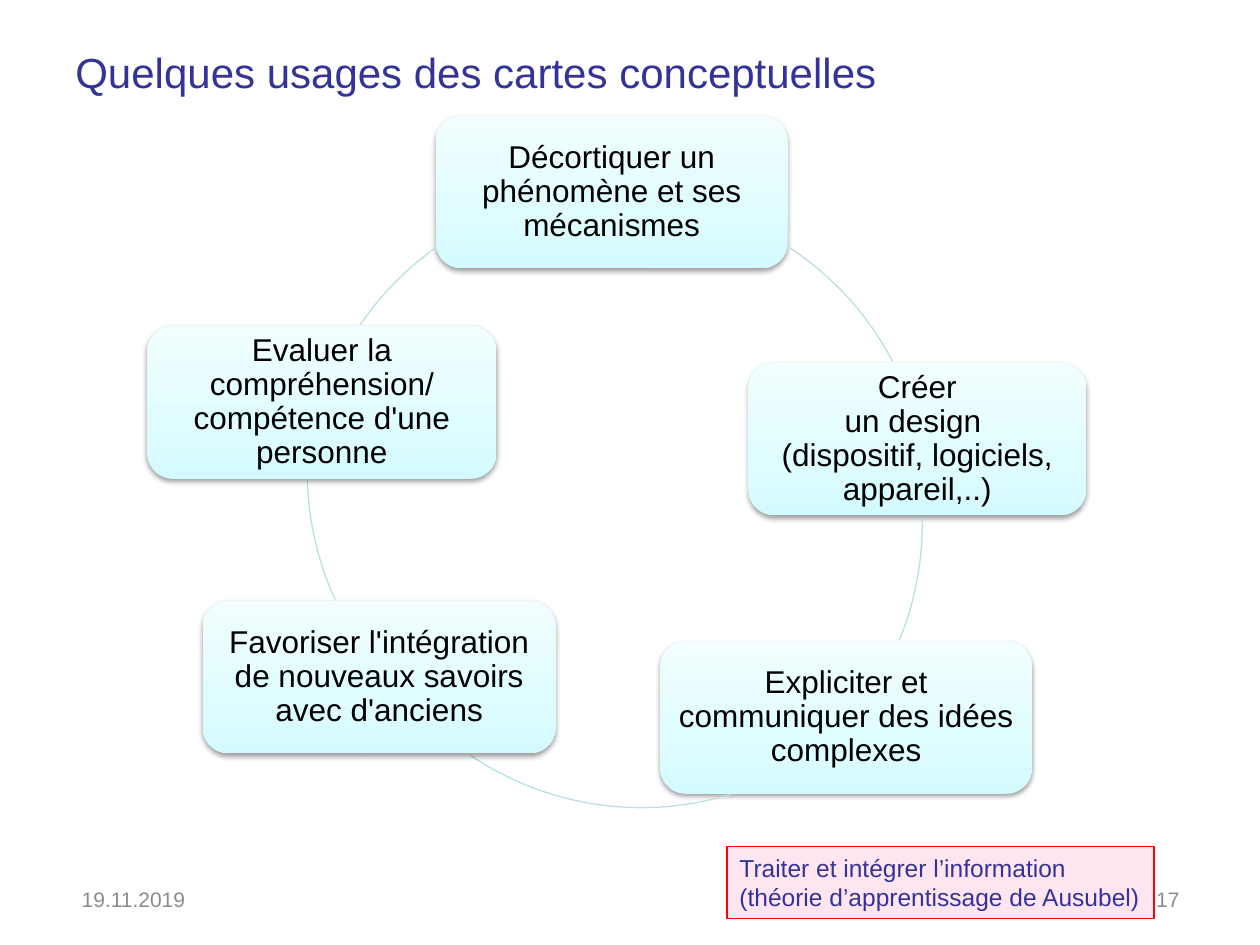
from copy import deepcopy

from lxml.etree import SubElement
from pptx import Presentation
from pptx.dml.color import RGBColor
from pptx.enum.shapes import MSO_SHAPE as Shape
from pptx.enum.text import MSO_ANCHOR as Anchor, MSO_AUTO_SIZE as AutoSize, PP_ALIGN as Align
from pptx.oxml.ns import qn
from pptx.util import Inches, Pt

BOX_HEIGHT = 1.21
RING_SIZE = 4.84
GRADIENT = [(0, "D3FBFF"), (0.35, "DFFCFF"), (1, "F2FEFF")]
USAGES = [
    (3.46, 0.92, 2.79, "Décortiquer un phénomène et ses mécanismes"),
    (5.94, 2.88, 2.68, "Créer\nun design \n(dispositif, logiciels, appareil,..)"),
    (5.24, 5.09, 2.95, "Expliciter et\ncommuniquer des idées complexes"),
    (1.61, 4.77, 2.8, "Favoriser l'intégration de nouveaux savoirs avec d'anciens"),
    (1.17, 2.59, 2.77, "Evaluer la compréhension/\ncompétence d'une personne"),
]
ARCS = [
    (2.52, 1.57, 303.4, 332.4),
    (2.48, 1.74, 358.8, 22.3),
    (2.67, 1.57, 73, 123.9),
    (2.44, 1.33, 155.2, 178.6),
    (2.44, 1.52, 214.2, 234.6),
]


def color(value):
    return RGBColor.from_string(value)


class UsageSlide:
    font = "Arial"

    def __init__(self, slide):
        self.slide = slide

    def add_text(self, shape, lines, size, hex_color, frame_format=None, paragraph_format=None):
        frame = shape.text_frame
        for name, value in {"word_wrap": True, **(frame_format or {})}.items():
            setattr(frame, name, value)
        for index, line in enumerate(lines):
            paragraph = frame.add_paragraph() if index else frame.paragraphs[0]
            paragraph.text = line
            for name, value in {"alignment": Align.LEFT, **(paragraph_format or {})}.items():
                setattr(paragraph, name, value)
            for run in paragraph.runs:
                for name, value in {"name": self.font, "size": Pt(size)}.items():
                    setattr(run.font, name, value)
                run.font.color.rgb = color(hex_color)

    def shape(self, kind, left, top, width, height):
        shape = self.slide.shapes.add_shape(kind, *map(Inches, (left, top, width, height)))
        shape.shadow.inherit = False
        return shape

    def label(self, left, top, width, height, text, size, hex_color, alignment=Align.LEFT):
        box = self.slide.shapes.add_textbox(*map(Inches, (left, top, width, height)))
        self.add_text(box, [text], size, hex_color,
                      {"vertical_anchor": Anchor.MIDDLE}, {"alignment": alignment})

    def usage(self, left, top, width, text):
        box = self.shape(Shape.ROUNDED_RECTANGLE, left, top, width, BOX_HEIGHT)
        box.fill.gradient()
        box.fill.gradient_angle = 90
        properties = box._element.spPr
        stop_list = properties.find(".//" + qn("a:gsLst"))
        stop_list.insert(1, deepcopy(stop_list[0]))
        for stop, (position, hex_color) in zip(box.fill.gradient_stops, GRADIENT):
            stop.position = position
            stop.color.rgb = color(hex_color)
        box.line.fill.background()
        shadow = SubElement(properties.find(qn("a:effectLst")), qn("a:outerShdw"),
                            blurRad=str(Pt(3.1)), dist=str(Pt(1.6)), dir="5400000", rotWithShape="0")
        black = SubElement(shadow, qn("a:srgbClr"), val="000000")
        SubElement(black, qn("a:alpha"), val="38000")
        margins = {f"margin_{side}": Inches(0.07) for side in ("left", "top", "right", "bottom")}
        self.add_text(box, [text], 18, "000000",
                      {"vertical_anchor": Anchor.MIDDLE, **margins},
                      {"alignment": Align.CENTER, "line_spacing": 0.9})

    def arc(self, left, top, start, end):
        arc = self.shape(Shape.ARC, left, top, RING_SIZE, RING_SIZE)
        for index, degrees in enumerate((start, end)):
            arc.adjustments[index] = degrees * 0.6
        arc.fill.background()
        arc.line.color.rgb = color("BBE0E3")
        arc.line.width = Pt(0.75)

    def note(self, left, top, width, height, lines):
        note = self.shape(Shape.RECTANGLE, left, top, width, height)
        note.fill.solid()
        note.fill.fore_color.rgb = color("FF0066")
        fill_color = note._element.spPr.find(qn("a:solidFill"))[0]
        SubElement(fill_color, qn("a:alpha"), val="10000")
        note.line.color.rgb = color("FF0000")
        note.line.width = Pt(0.75)
        self.add_text(note, lines, 14, "333399",
                      {"word_wrap": False, "auto_size": AutoSize.SHAPE_TO_FIT_TEXT,
                       "vertical_anchor": Anchor.TOP})


def main():
    presentation = Presentation()
    presentation.slide_width, presentation.slide_height = Inches(10), Inches(7.5)
    page = UsageSlide(presentation.slides.add_slide(presentation.slide_layouts[6]))
    page.label(0.5, 0.3, 9, 0.54, "Quelques usages des cartes conceptuelles", 24, "333399")
    for usage, arc in zip(USAGES, ARCS):
        page.usage(*usage)
        page.arc(*arc)
    page.label(0.55, 6.95, 2.33, 0.37, "19.11.2019", 12, "8C8C8C")
    page.label(7.13, 6.98, 2.33, 0.31, "17", 12, "8C8C8C", Align.RIGHT)
    page.note(5.77, 6.72, 3.39, 0.57,
              ["Traiter et intégrer l’information", "(théorie d’apprentissage de Ausubel)"])
    presentation.save("out.pptx")


if __name__ == "__main__":
    main()
